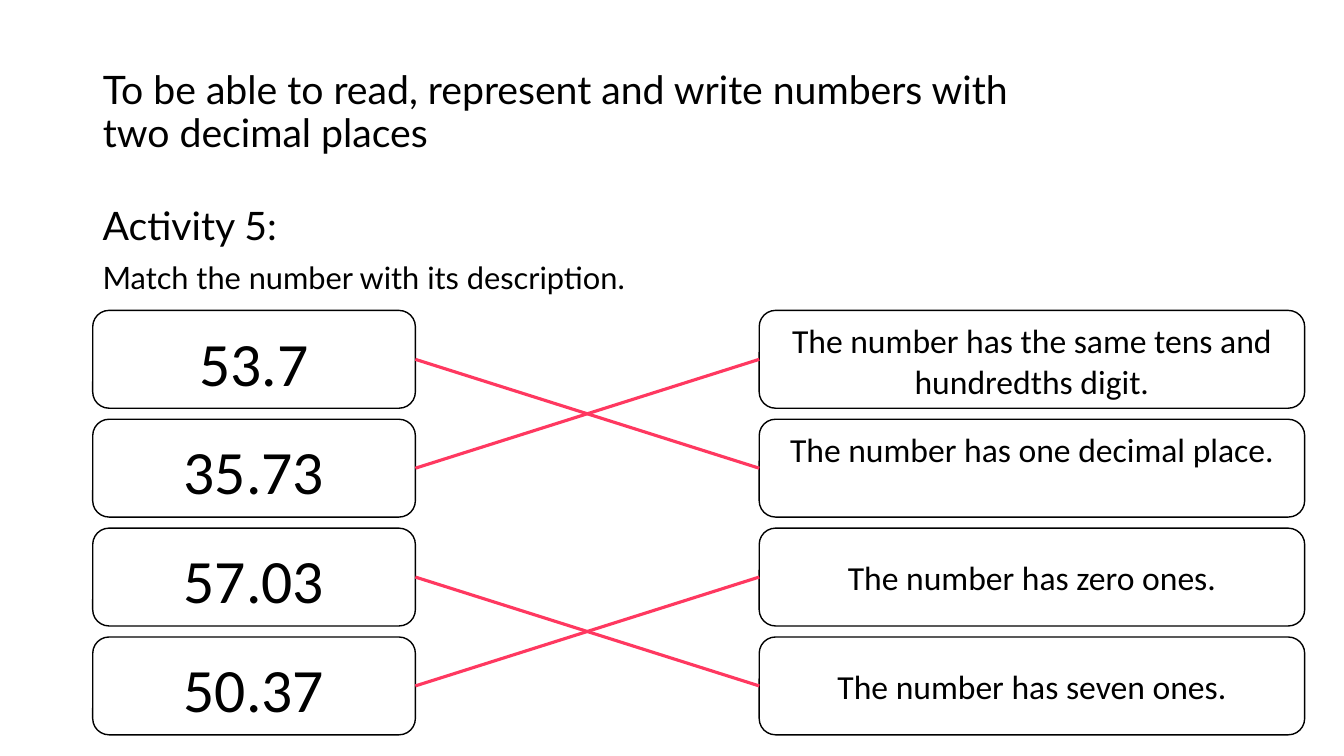
from dataclasses import dataclass

from lxml.etree import SubElement
from pptx import Presentation
from pptx.dml.color import RGBColor
from pptx.enum.shapes import MSO_CONNECTOR, MSO_SHAPE
from pptx.enum.text import MSO_ANCHOR, MSO_AUTO_SIZE, PP_ALIGN
from pptx.oxml.ns import qn
from pptx.util import Inches, Pt


@dataclass(frozen=True)
class Theme:
    ink: RGBColor = RGBColor(0, 0, 0)
    paper: RGBColor = RGBColor(255, 255, 255)
    match: RGBColor = RGBColor(0xFF, 0x38, 0x60)
    head_font: str = "Lato"
    card_font: str = "Calibri"
    head: int = 28
    task: int = 22
    number: int = 44
    clue: int = 24
    edge: float = 1
    link: float = 2.25


THEME = Theme()
LEFT = 0.92
TOP, STEP, HEIGHT = 3.08, 1.08, 0.97
NUMBERS = ["53.7", "35.73", "57.03", "50.37"]
CLUES = [
    ("The number has the same tens and hundredths digit.", MSO_ANCHOR.TOP),
    ("The number has one decimal place.", MSO_ANCHOR.TOP),
    ("The number has zero ones.", MSO_ANCHOR.MIDDLE),
    ("The number has seven ones.", MSO_ANCHOR.MIDDLE),
]
ANSWERS = [1, 0, 3, 2]


def write(para, text, *, size, font=THEME.head_font, align=PP_ALIGN.LEFT,
          spacing=0.9, before=0):
    para.text = text
    para.alignment = align
    para.line_spacing = spacing
    para.space_before = Pt(before)
    para.font.size = Pt(size)
    para.font.name = font
    para.font.color.rgb = THEME.ink


def set_frame(frame, anchor):
    frame.word_wrap = True
    frame.auto_size = MSO_AUTO_SIZE.NONE
    frame.vertical_anchor = anchor


def add_title(slide, text):
    title = slide.shapes.title
    title.left, title.top = Inches(LEFT), Inches(0.4)
    title.width, title.height = Inches(9.6), Inches(1.45)
    set_frame(title.text_frame, MSO_ANCHOR.MIDDLE)
    write(title.text_frame.paragraphs[0], text, size=THEME.head)


def add_task(slide, name, text):
    box = slide.shapes.add_textbox(Inches(LEFT), Inches(2), Inches(11.5), Inches(1))
    frame = box.text_frame
    set_frame(frame, MSO_ANCHOR.TOP)
    write(frame.paragraphs[0], name, size=THEME.head)
    write(frame.add_paragraph(), text, size=THEME.task, before=10)


def add_card(slide, row, left, width, text, anchor, **style):
    card = slide.shapes.add_shape(
        MSO_SHAPE.ROUNDED_RECTANGLE, Inches(left), Inches(TOP + row * STEP),
        Inches(width), Inches(HEIGHT))
    card.shadow.inherit = False
    card.fill.solid()
    card.fill.fore_color.rgb = THEME.paper
    card.line.color.rgb = THEME.ink
    card.line.width = Pt(THEME.edge)
    set_frame(card.text_frame, anchor)
    write(card.text_frame.paragraphs[0], text, font=THEME.card_font,
          align=PP_ALIGN.CENTER, **style)
    return card


def add_link(slide, number, clue):
    link = slide.shapes.add_connector(MSO_CONNECTOR.STRAIGHT, 0, 0, 0, 0)
    link.begin_connect(number, 3)
    link.end_connect(clue, 1)
    link.line.color.rgb = THEME.match
    link.line.width = Pt(THEME.link)
    SubElement(link._element.spPr, qn("a:effectLst"))


def main():
    deck = Presentation()
    deck.slide_width, deck.slide_height = Inches(13.33), Inches(7.5)
    slide = deck.slides.add_slide(deck.slide_layouts.get_by_name("Title Only"))
    add_title(slide, "To be able to read, represent and write numbers with two decimal places")
    add_task(slide, "Activity 5:", "Match the number with its description.")
    numbers = [
        add_card(slide, row, LEFT, 3.2, text, MSO_ANCHOR.BOTTOM,
                 size=THEME.number, spacing=1.5)
        for row, text in enumerate(NUMBERS)
    ]
    clues = [
        add_card(slide, row, 7.53, 5.41, text, anchor, size=THEME.clue, spacing=1)
        for row, (text, anchor) in enumerate(CLUES)
    ]
    for number, answer in zip(numbers, ANSWERS):
        add_link(slide, number, clues[answer])
    deck.save("out.pptx")


if __name__ == "__main__":
    main()
